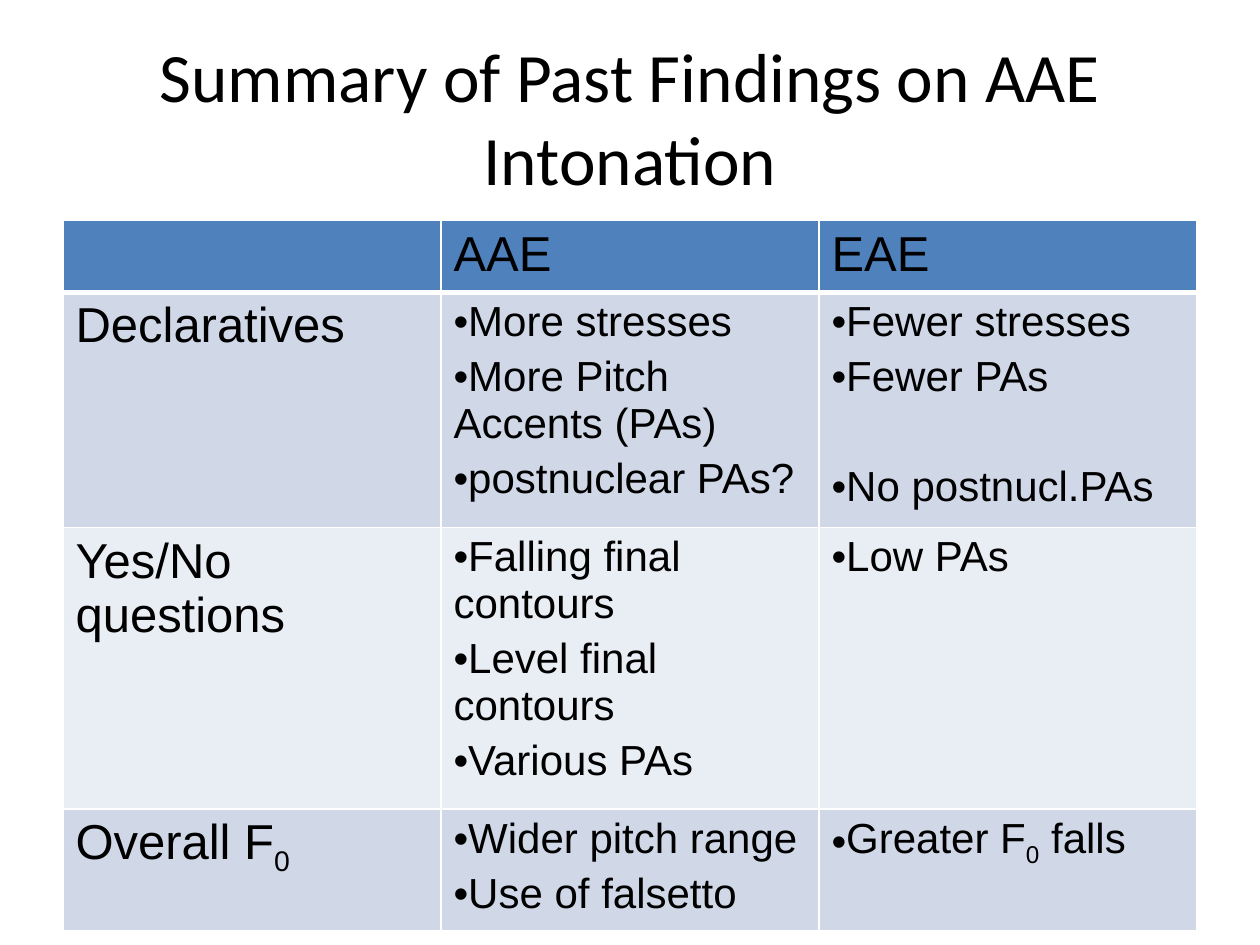
"""Build the slide summarising past findings on AAE intonation."""
import dataclasses

import lxml.etree
import pptx
import pptx.dml.color
import pptx.enum.text
import pptx.oxml.ns
import pptx.util
from pptx.util import Cm


@dataclasses.dataclass(frozen=True)
class Theme:
    text: str = "000000"
    header: str = "4F81BD"
    bands: tuple = ("D0D8E8", "E9EDF4")
    border: str = "FFFFFF"
    title_font: str = "Calibri"
    body_font: str = "Arial"
    title_size: float = 39.6
    label_size: float = 28
    item_size: float = 24
    thin: float = 1
    thick: float = 3
    item_gap: float = 4.8
    skipped_line: float = 36


THEME = Theme()
HEADER = ("AAE", "EAE")
ROWS = (
    ("Declaratives",
     ("More stresses", "More Pitch Accents (PAs)", "postnuclear PAs?"),
     ("Fewer stresses", "Fewer PAs", "No postnucl.PAs")),
    ("Yes/No questions",
     ("Falling final contours", "Level final contours", "Various PAs"),
     ("Low PAs",)),
    ("Overall F_0_",
     ("Wider pitch range", "Use of falsetto"),
     ("Greater F_0_ falls",)),
)
ROW_HEIGHT = 1.04
ALIGNED_ITEMS = {"No postnucl.PAs"}


def rgb(value):
    return pptx.dml.color.RGBColor.from_string(value)


def add_element(parent, tag, **attributes):
    """Append a drawing element to a parent."""
    return lxml.etree.SubElement(parent, pptx.oxml.ns.qn(f"a:{tag}"), **attributes)


def write(p, text, size, font=THEME.body_font, align=None, bullet=False, before=0):
    """Fill a paragraph; text between underscores becomes subscript."""
    if bullet:
        pPr = p._p.get_or_add_pPr()
        add_element(pPr, "buFont", typeface=font)
        add_element(pPr, "buChar", char="•")
    p.alignment = align
    p.space_before = pptx.util.Pt(before)
    for i, part in enumerate(text.split("_")):
        if not part:
            continue
        r = p.add_run()
        r.text = part
        r.font.size = pptx.util.Pt(size)
        r.font.name = font
        r.font.bold = False
        r.font.color.rgb = rgb(THEME.text)
        if i % 2:
            r.font._element.set("baseline", "-25000")
    add_element(p._p, "endParaRPr", sz=str(round(size * 100)))


def style_cell(cell, fill, top, bottom):
    """Give a cell its borders and fill."""
    tcPr = cell._tc.get_or_add_tcPr()
    widths = {"lnL": THEME.thin, "lnR": THEME.thin, "lnT": top, "lnB": bottom}
    for tag, width in widths.items():
        ln = add_element(tcPr, tag, w=str(pptx.util.Pt(width)))
        add_element(add_element(ln, "solidFill"), "srgbClr", val=THEME.border)
    cell.fill.solid()
    cell.fill.fore_color.rgb = rgb(fill)


def write_items(cell, items):
    """Write a bulleted list into a cell."""
    tf = cell.text_frame
    for i, item in enumerate(items):
        p = tf.add_paragraph() if i else tf.paragraphs[0]
        gap = THEME.skipped_line if item in ALIGNED_ITEMS else THEME.item_gap
        write(p, item, THEME.item_size, bullet=True, before=gap if i else 0)


def add_title(s, text):
    """Add the centred slide title."""
    sp = s.shapes.add_textbox(Cm(1.27), Cm(0.76), Cm(22.86), Cm(3.18))
    tf = sp.text_frame
    tf.word_wrap = True
    tf.vertical_anchor = pptx.enum.text.MSO_ANCHOR.MIDDLE
    write(tf.paragraphs[0], text, THEME.title_size, font=THEME.title_font,
          align=pptx.enum.text.PP_ALIGN.CENTER)


def add_findings(s):
    """Add the table comparing AAE and EAE, with rows that grow to fit."""
    count = len(ROWS) + 1
    table = s.shapes.add_table(count, 3, Cm(1.27), Cm(4.45),
                               Cm(22.86), Cm(count * ROW_HEIGHT)).table
    table.first_row = table.horz_banding = False
    for i, row in enumerate(table.rows):
        fill = THEME.bands[(i - 1) % 2] if i else THEME.header
        for cell in row.cells:
            style_cell(cell, fill, THEME.thick if i == 1 else THEME.thin,
                       THEME.thin if i else THEME.thick)
    for col, text in enumerate(HEADER, 1):
        write(table.cell(0, col).text_frame.paragraphs[0], text, THEME.label_size)
    for i, (label, *lists) in enumerate(ROWS, 1):
        write(table.cell(i, 0).text_frame.paragraphs[0], label, THEME.label_size)
        for col, items in enumerate(lists, 1):
            write_items(table.cell(i, col), items)


def main():
    prs = pptx.Presentation()
    prs.slide_width, prs.slide_height = Cm(25.4), Cm(19.05)
    s = prs.slides.add_slide(prs.slide_layouts[6])
    add_title(s, "Summary of Past Findings on AAE Intonation")
    add_findings(s)
    prs.save("out.pptx")


if __name__ == "__main__":
    main()
